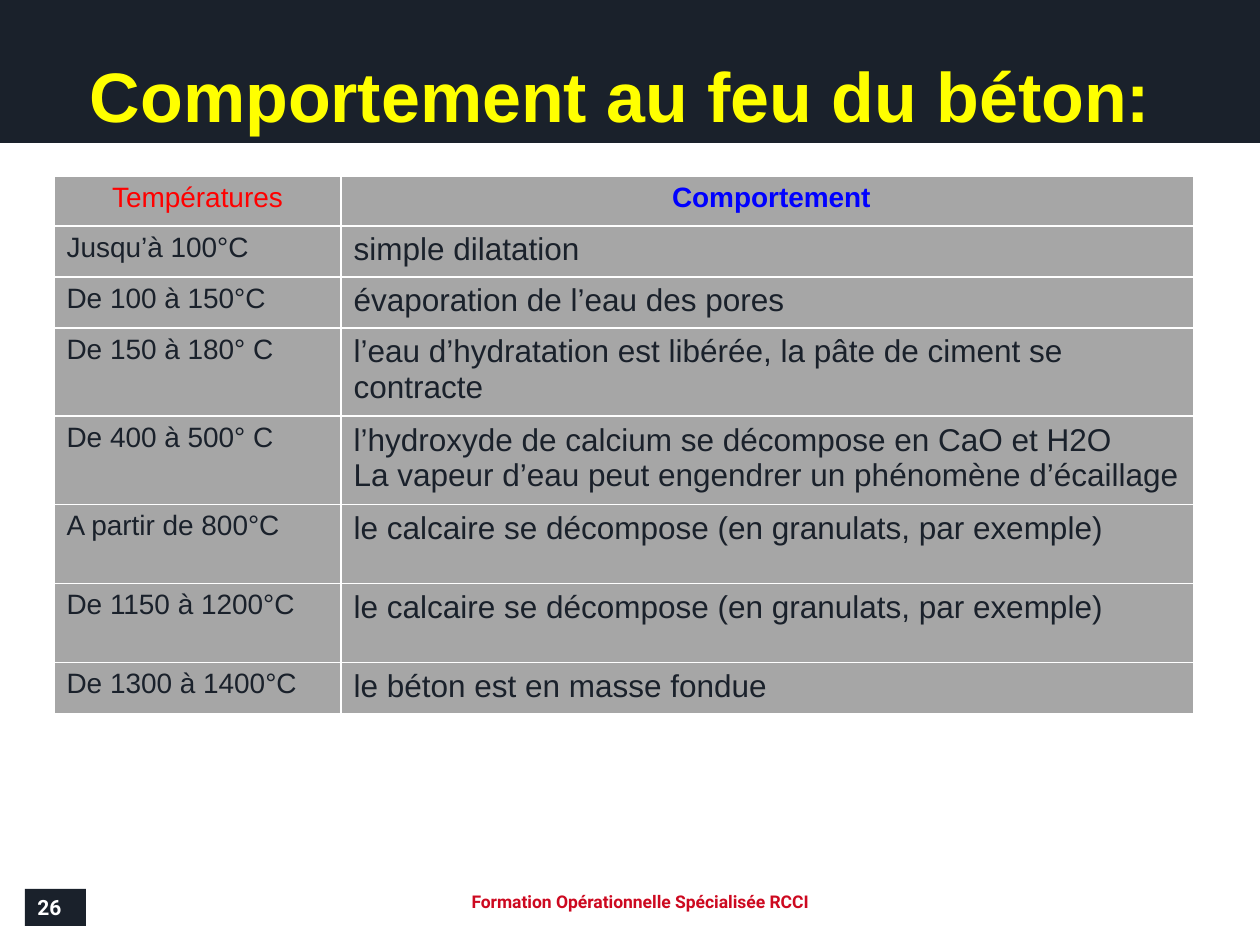
import pptx
import pptx.dml.color
import pptx.enum.shapes
import pptx.enum.text
import pptx.oxml
import pptx.oxml.ns
import pptx.util

RGB = pptx.dml.color.RGBColor
NAVY = RGB(0x1A, 0x21, 0x2B)
WHITE = RGB(0xFF, 0xFF, 0xFF)
YELLOW = RGB(0xFF, 0xFF, 0x00)
CRIMSON = RGB(0xCD, 0x09, 0x20)
RED = RGB(0xFF, 0x00, 0x00)
BLUE = RGB(0x00, 0x00, 0xFF)
GREY = RGB(0xA6, 0xA6, 0xA6)

ALIGN = pptx.enum.text.PP_ALIGN
ANCHOR = pptx.enum.text.MSO_ANCHOR

HEADS = [("Températures", RED, False), (" Comportement", BLUE, True)]
ROWS = [
    (51, "Jusqu’à 100°C", "simple dilatation"),
    (51, "De 100 à 150°C", "évaporation de l’eau des pores"),
    (83, "De 150 à 180° C",
     "l’eau d’hydratation est libérée, la pâte de ciment se contracte"),
    (83, "De 400 à 500° C",
     "l’hydroxyde de calcium se décompose en CaO et H2O\n"
     "La vapeur d’eau peut engendrer un phénomène d’écaillage"),
    (79, "A partir de 800°C",
     "le calcaire se décompose (en granulats, par exemple)"),
    (79, "De 1150 à 1200°C",
     "le calcaire se décompose (en granulats, par exemple)"),
    (51, "De 1300 à 1400°C", "le béton est en masse fondue"),
]


def px(count):
    """Turn whole pixels into EMU."""
    return round(count * 914400 / 126)


def write(frame, text, size, color, bold=False, font="Arial", align=ALIGN.LEFT):
    """Set the text of a frame and format all its runs."""
    frame.text = text
    for para in frame.paragraphs:
        para.alignment = align
        for run in para.runs:
            run.font.name = font
            run.font.size = pptx.util.Pt(size)
            run.font.bold = bold
            run.font.color.rgb = color


def block(slide, box):
    """Add a plain navy rectangle and return its text frame."""
    kind = pptx.enum.shapes.MSO_SHAPE.RECTANGLE
    shape = slide.shapes.add_shape(kind, *map(px, box))
    shape.shadow.inherit = False
    shape.fill.solid()
    shape.fill.fore_color.rgb = NAVY
    shape.line.fill.background()
    shape.text_frame.word_wrap = True
    return shape.text_frame


def banner(slide, box):
    """Place the title band."""
    frame = block(slide, box)
    frame.vertical_anchor = ANCHOR.BOTTOM
    write(frame, "Comportement au feu du béton: ", 40, YELLOW, True,
          align=ALIGN.CENTER)


def number(slide, box):
    """Place the page number."""
    frame = block(slide, box)
    frame.vertical_anchor = ANCHOR.MIDDLE
    write(frame, "26", 12, WHITE, True, "Roboto")


def footer(slide, box):
    """Place the footer line."""
    frame = slide.shapes.add_textbox(*map(px, box)).text_frame
    frame.word_wrap = True
    frame.margin_top = frame.margin_bottom = px(5)
    write(frame, "Formation Opérationnelle Spécialisée RCCI", 10, CRIMSON,
          True, "Roboto", ALIGN.CENTER)
    frame.paragraphs[0].line_spacing = 0.8


def paint(cell):
    """Give a cell white borders and a grey fill."""
    props = cell._tc.get_or_add_tcPr()
    space = pptx.oxml.ns.nsdecls("a")
    for side in "LRTB":
        props.append(pptx.oxml.parse_xml(
            f'<a:ln{side} {space} w="12700"><a:solidFill>'
            f'<a:srgbClr val="{WHITE}"/></a:solidFill></a:ln{side}>'))
    cell.fill.solid()
    cell.fill.fore_color.rgb = GREY


def chart(slide, box, split, head):
    """Place the table of temperatures and behaviours."""
    shape = slide.shapes.add_table(len(ROWS) + 1, 2, *map(px, box))
    table = shape.table
    table.horz_banding = False
    table.columns[0].width = px(split)
    table.columns[1].width = px(box[2] - split)
    table.rows[0].height = px(head)
    for cell in table.iter_cells():
        paint(cell)
    for col, (text, color, bold) in enumerate(HEADS):
        write(table.cell(0, col).text_frame, text, 16, color, bold,
              align=ALIGN.CENTER)
    for row, (height, heat, effect) in enumerate(ROWS, 1):
        table.rows[row].height = px(height)
        write(table.cell(row, 0).text_frame, heat, 16, NAVY)
        write(table.cell(row, 1).text_frame, effect, 18, NAVY)


def main():
    """Build and save the slide."""
    deck = pptx.Presentation()
    deck.slide_width, deck.slide_height = px(1260), px(945)
    slide = deck.slides.add_slide(deck.slide_layouts[6])
    footer(slide, (372, 890, 536, 30))
    banner(slide, (0, 0, 1260, 143))
    number(slide, (25, 889, 61, 37))
    chart(slide, (54, 176, 1140, 527), 287, 50)
    deck.save("out.pptx")


if __name__ == "__main__":
    main()
